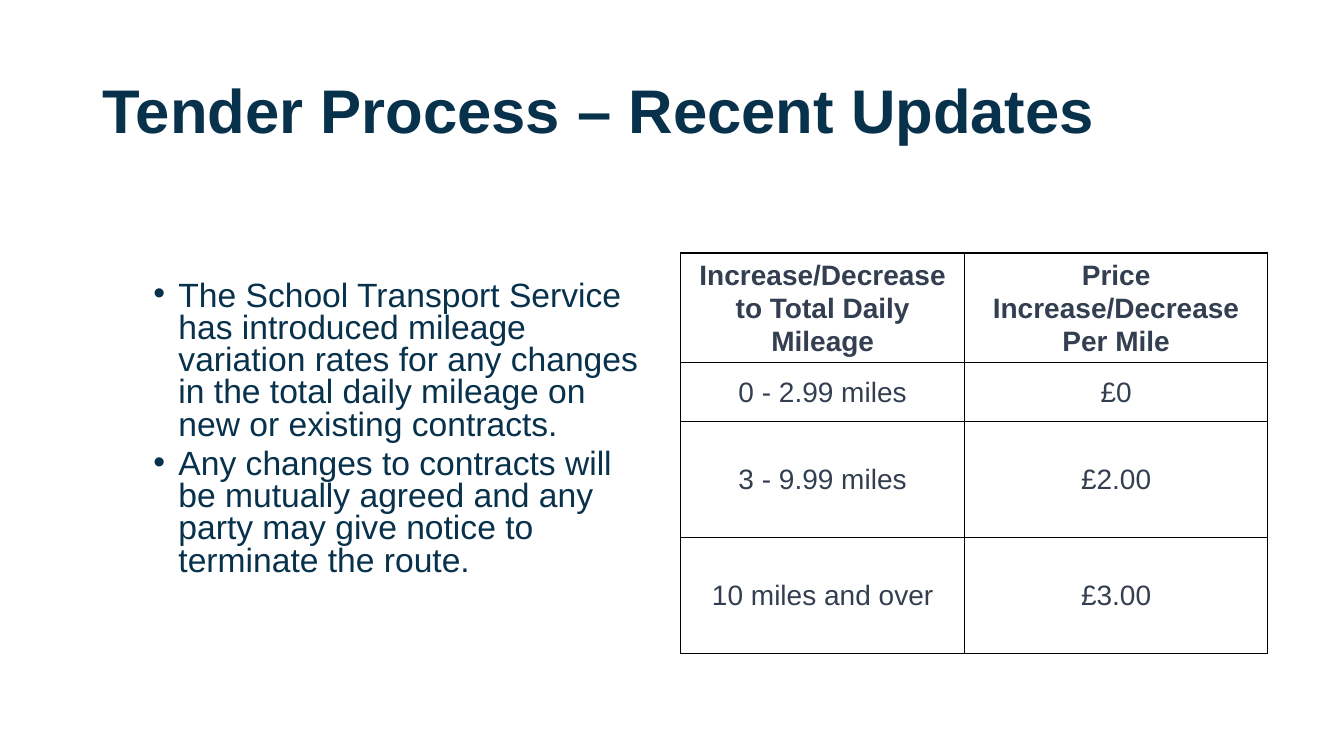
from lxml import etree
from pptx import Presentation
from pptx.dml.color import RGBColor
from pptx.enum.text import MSO_ANCHOR, MSO_AUTO_SIZE, PP_ALIGN
from pptx.oxml.ns import qn
from pptx.util import Inches, Pt

MIDDLE, NO_FIT = MSO_ANCHOR.MIDDLE, MSO_AUTO_SIZE.NONE
LEFT, CENTER = PP_ALIGN.LEFT, PP_ALIGN.CENTER

# Content
TITLE = "Tender Process – Recent Updates"
POINTS = [
    "The School Transport Service has introduced mileage variation rates for "
    "any changes in the total daily mileage on new or existing contracts.",
    "Any changes to contracts will be mutually agreed and any party may give "
    "notice to terminate the route.",
]
RATES = [
    ("Increase/Decrease to Total Daily Mileage", "Price Increase/Decrease Per Mile"),
    ("0 - 2.99 miles", "£0"),
    ("3 - 9.99 miles", "£2.00"),
    ("10 miles and over", "£3.00"),
]
COL_WIDTHS = [2.82, 3]
ROW_HEIGHTS = [1.09, 0.58, 1.15, 1.15]
NAVY, SLATE, BLACK = "08314C", "333F50", "000000"


def color(value):
    return RGBColor.from_string(value)


def write(p, text, size, fill, bold=False, align=LEFT, spacing=1.0, before=0):
    p.alignment = align
    p.line_spacing = spacing
    p.space_before = Pt(before)
    r = p.add_run()
    r.text = text
    r.font.name = "Arial"
    r.font.size = Pt(size)
    r.font.bold = bold
    r.font.color.rgb = color(fill)


def place(sp, left, top, width, height):
    sp.left, sp.top = Inches(left), Inches(top)
    sp.width, sp.height = Inches(width), Inches(height)
    tf = sp.text_frame
    tf.word_wrap = True
    tf.auto_size = NO_FIT
    tf.vertical_anchor = MIDDLE
    return tf


def add_bullet(p, margin, indent):
    pPr = p._p.get_or_add_pPr()
    pPr.set("marL", str(Inches(margin)))
    pPr.set("indent", str(Inches(indent)))
    etree.SubElement(pPr, qn("a:buFont")).set("typeface", "Arial")
    etree.SubElement(pPr, qn("a:buChar")).set("char", "•")


def add_borders(cell, fill, width):
    tcPr = cell._tc.get_or_add_tcPr()
    for i, side in enumerate(("a:lnL", "a:lnR", "a:lnT", "a:lnB")):
        ln = etree.Element(qn(side), w=str(Pt(width)))
        solid = etree.SubElement(ln, qn("a:solidFill"))
        etree.SubElement(solid, qn("a:srgbClr")).set("val", fill)
        tcPr.insert(i, ln)


prs = Presentation()
prs.slide_width, prs.slide_height = Inches(13.33), Inches(7.5)
s = prs.slides.add_slide(prs.slide_layouts[1])

# Title
tf = place(s.shapes.title, 0.92, 0.4, 11.5, 1.45)
write(tf.paragraphs[0], TITLE, 44, NAVY, bold=True, spacing=0.9)

# Bullet list
tf = place(s.placeholders[1], 0.92, 2.6, 5.67, 3.33)
for i, point in enumerate(POINTS):
    p = tf.add_paragraph() if i else tf.paragraphs[0]
    p.level = 1
    add_bullet(p, 0.75, -0.25)
    write(p, point, 24, NAVY, spacing=0.8, before=5 if i else 0)

# Mileage rates table
table = s.shapes.add_table(
    len(RATES), len(COL_WIDTHS), Inches(6.75), Inches(2.51),
    Inches(sum(COL_WIDTHS)), Inches(sum(ROW_HEIGHTS))).table
for col, width in zip(table.columns, COL_WIDTHS):
    col.width = Inches(width)
for row, height, texts in zip(table.rows, ROW_HEIGHTS, RATES):
    row.height = Inches(height)
    for cell, text in zip(row.cells, texts):
        cell.fill.background()
        cell.vertical_anchor = MIDDLE
        cell.margin_left = cell.margin_right = Inches(0.07)
        cell.margin_top = cell.margin_bottom = 0
        add_borders(cell, BLACK, 1)
        write(cell.text_frame.paragraphs[0], text, 20, SLATE,
              bold=texts is RATES[0], align=CENTER, spacing=1.06)

prs.save("out.pptx")
